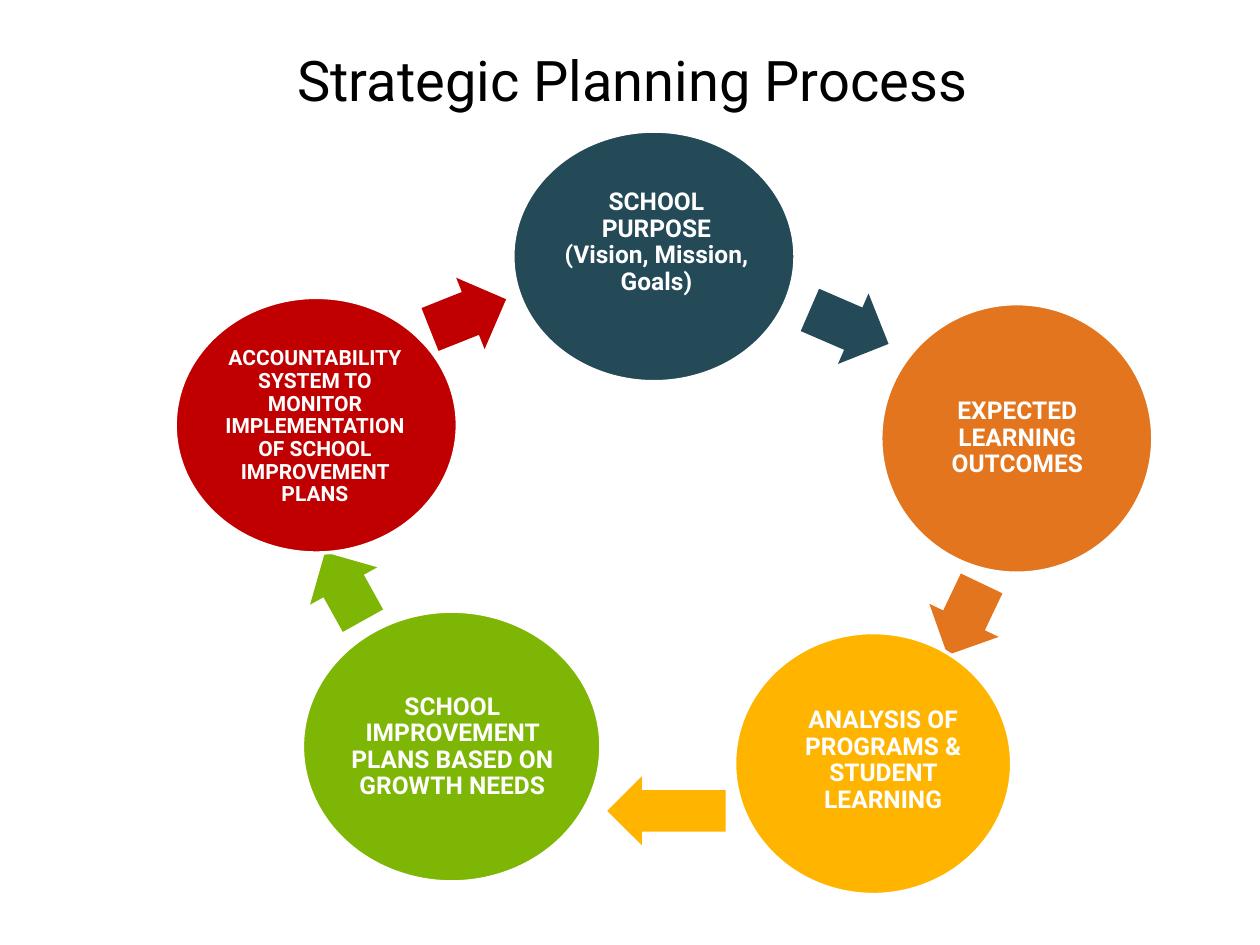
from dataclasses import dataclass

from pptx import Presentation
from pptx.dml.color import RGBColor
from pptx.enum.shapes import MSO_SHAPE as Shape
from pptx.enum.text import MSO_ANCHOR as Anchor, PP_ALIGN as Align
from pptx.util import Inches, Pt


@dataclass(frozen=True)
class Theme:
    font: str = "Roboto"
    black: str = "000000"
    white: str = "FFFFFF"
    slate: str = "244A58"
    orange: str = "E2751D"
    amber: str = "FFB400"
    green: str = "7EB606"
    red: str = "C00000"
    title_size: int = 32
    stage_size: int = 14
    small_size: int = 12
    outline: int = 2


THEME = Theme()


@dataclass(frozen=True)
class Stage:
    label: str
    color: str
    circle: tuple  # left, top, width, height
    label_box: tuple
    arrow: tuple  # box of the arrow to the next stage
    angle: float
    size: int = THEME.stage_size


# The cycle, clockwise from the top
STAGES = [
    Stage("SCHOOL PURPOSE (Vision, Mission, Goals)", THEME.slate,
          (4.07, 1.04, 2.24, 1.99), (4.42, 1.22, 1.58, 1.41),
          (6.4, 2.29, 0.68, 0.61), 23.4),
    Stage("EXPECTED LEARNING OUTCOMES", THEME.orange,
          (6.99, 2.41, 2.16, 2.14), (7.31, 2.72, 1.53, 1.52),
          (7.34, 4.61, 0.63, 0.61), 115.5),
    Stage("ANALYSIS OF PROGRAMS & STUDENT LEARNING", THEME.amber,
          (5.83, 5.02, 2.2, 2.08), (6.23, 5.3, 1.56, 1.47),
          (4.82, 6.16, 0.94, 0.55), 180),
    Stage("SCHOOL IMPROVEMENT PLANS BASED ON GROWTH NEEDS", THEME.green,
          (2.4, 4.85, 2.37, 2.15), (2.75, 5.17, 1.68, 1.52),
          (2.42, 4.35, 0.62, 0.61), 240.9),
    Stage("ACCOUNTABILITY SYSTEM TO MONITOR IMPLEMENTATION OF SCHOOL "
          "IMPROVEMENT PLANS", THEME.red,
          (1.39, 2.36, 2.24, 2.03), (1.71, 2.67, 1.58, 1.44),
          (3.39, 2.19, 0.65, 0.61), 338.3, THEME.small_size),
]


def inches(box):
    return [Inches(length) for length in box]


def write(frame, text, size, color, bold=False):
    """Put one centred run into a wrapped, vertically centred frame."""
    frame.word_wrap = True
    frame.vertical_anchor = Anchor.MIDDLE
    paragraph = frame.paragraphs[0]
    paragraph.alignment = Align.CENTER
    run = paragraph.add_run()
    run.text = text
    run.font.name = THEME.font
    run.font.size = Pt(size)
    run.font.bold = bold
    run.font.color.rgb = RGBColor.from_string(color)
    return paragraph


def add_title(slide, text):
    title = slide.shapes.title
    title.left, title.top, title.width, title.height = inches((0.27, 0.31, 9.5, 0.64))
    write(title.text_frame, text, THEME.title_size, THEME.black)


def add_filled(slide, preset, box, color):
    filled = slide.shapes.add_shape(preset, *inches(box))
    filled.shadow.inherit = False
    filled.fill.solid()
    filled.fill.fore_color.rgb = RGBColor.from_string(color)
    filled.line.fill.background()
    return filled


def add_circle(slide, stage):
    circle = add_filled(slide, Shape.OVAL, stage.circle, stage.color)
    circle.line.color.rgb = RGBColor.from_string(THEME.white)
    circle.line.width = Pt(THEME.outline)


def add_label(slide, stage):
    frame = slide.shapes.add_textbox(*inches(stage.label_box)).text_frame
    frame.margin_left = frame.margin_right = Inches(0.02)
    frame.margin_top = frame.margin_bottom = Inches(0.02)
    paragraph = write(frame, stage.label, stage.size, THEME.white, bold=True)
    paragraph.line_spacing = 0.9
    paragraph.space_after = Pt(round(0.35 * stage.size, 1))


def add_arrow(slide, stage):
    arrow = add_filled(slide, Shape.RIGHT_ARROW, stage.arrow, stage.color)
    arrow.adjustments[0] = 0.6
    arrow.adjustments[1] = 0.5
    arrow.rotation = stage.angle


def main():
    deck = Presentation()
    deck.slide_width, deck.slide_height = Inches(10), Inches(7.5)
    title_only = deck.slide_layouts[5]
    slide = deck.slides.add_slide(title_only)

    # Heading
    add_title(slide, "Strategic Planning Process")

    # Cycle of stages, each pointing to the next
    for stage in STAGES:
        add_circle(slide, stage)
        add_label(slide, stage)
        add_arrow(slide, stage)

    deck.save("out.pptx")


if __name__ == "__main__":
    main()
